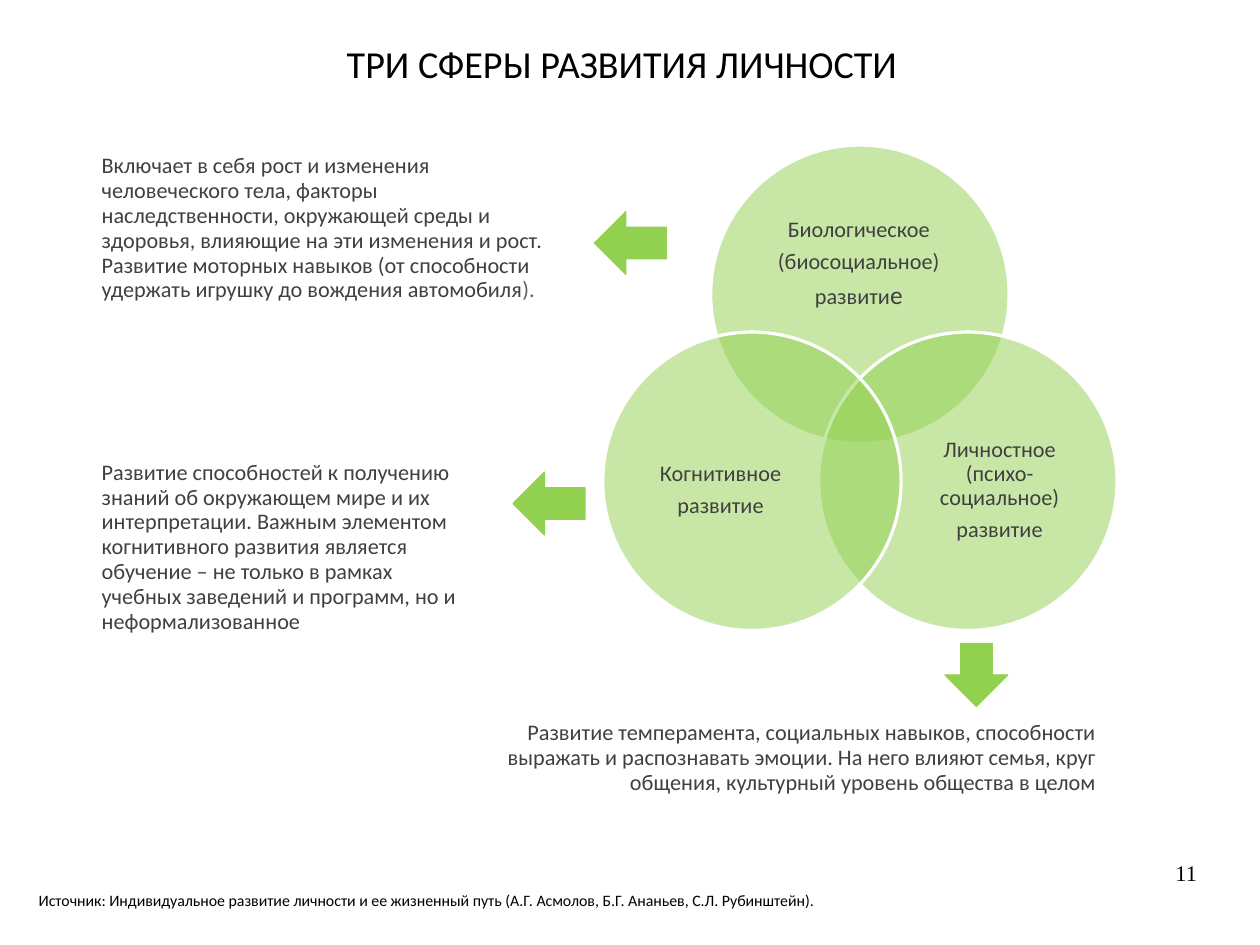
"""Builds a slide on the three spheres of personal growth."""
from dataclasses import dataclass
from math import cos, radians, sin

from lxml.etree import SubElement
from pptx import Presentation
from pptx.dml.color import RGBColor as Rgb
from pptx.enum.shapes import MSO_SHAPE as Kind
from pptx.enum.text import MSO_ANCHOR as Anchor, MSO_AUTO_SIZE as Fit, PP_ALIGN as Align
from pptx.oxml.ns import qn
from pptx.util import Cm, Pt


@dataclass(frozen=True)
class Theme:
    green: str = "92D050"
    white: str = "FFFFFF"
    black: str = "000000"
    dark: str = "404040"
    gray: str = "606060"
    sans: str = "Calibri"
    serif: str = "Times New Roman"
    head: float = 24
    big: float = 16
    text: float = 14
    small: float = 10


LOOK = Theme()


@dataclass(frozen=True)
class Box:
    x: float
    y: float
    w: float
    h: float

    def cm(self) -> tuple:
        return Cm(self.x), Cm(self.y), Cm(self.w), Cm(self.h)


@dataclass(frozen=True)
class Run:
    text: str
    size: float = LOOK.text
    color: str = LOOK.dark
    font: str = LOOK.sans


@dataclass(frozen=True)
class Note:
    box: Box
    paras: tuple
    align: Align = Align.LEFT
    anchor: Anchor = Anchor.TOP
    inset: bool = True
    lead: float = 0.93
    after: float = 0


@dataclass(frozen=True)
class Sphere:
    angle: float
    box: Box
    paras: tuple


@dataclass(frozen=True)
class Arrow:
    kind: Kind
    box: Box


MID_X, MID_Y, REACH, SIDE = 19.11, 9.31, 2.77, 6.63

SPHERES = (
    Sphere(-90, Box(16.66, 4.39, 4.85, 2.97), (
        (Run("Биологическое"),),
        (Run("(биосоциальное)"),),
        (Run("развити"), Run("е", LOOK.big)))),
    Sphere(30, Box(20.22, 9.09, 3.99, 3.63), (
        (Run("Личностное (психо-социальное)"),),
        (Run("развитие"),))),
    Sphere(150, Box(14.02, 9.09, 3.99, 3.63), (
        (Run("Когнитивное"),),
        (Run("развитие"),))),
)

ARROWS = (
    Arrow(Kind.LEFT_ARROW, Box(13.21, 4.7, 1.6, 1.4)),
    Arrow(Kind.LEFT_ARROW, Box(11.4, 10.49, 1.6, 1.4)),
    Arrow(Kind.DOWN_ARROW, Box(21, 14.3, 1.4, 1.4)),
)

TITLE = Note(Box(2.39, 0.69, 22.86, 1.55),
             ((Run("ТРИ СФЕРЫ РАЗВИТИЯ ЛИЧНОСТИ", LOOK.head, LOOK.black),),),
             Align.CENTER, Anchor.MIDDLE)

NOTES = (
    Note(Box(2.01, 3.3, 10.59, 3.61), ((
        Run("Включает в себя рост и изменения человеческого тела, факторы "
            "наследственности, окружающей среды и здоровья, влияющие на эти "
            "изменения и рост. Развитие моторных навыков (от способности "
            "удержать игрушку до вождения автомобиля"),
        Run(").", color=LOOK.gray)),)),
    Note(Box(2.01, 10.11, 8.79, 4.14), ((
        Run("Развитие способностей к получению знаний об окружающем мире и их "
            "интерпретации. Важным элементом когнитивного развития является "
            "обучение – не только в рамках учебных заведений и программ, но и "
            "неформализованное"),),)),
    Note(Box(10.21, 15.9, 14.4, 1.93), ((
        Run("Развитие темперамента, социальных навыков, способности выражать и "
            "распознавать эмоции. На него влияют семья, круг общения, "
            "культурный уровень общества в целом"),),), Align.RIGHT),
    Note(Box(0.61, 19.71, 20.8, 0.66), ((
        Run("Источник: Индивидуальное развитие личности и ее жизненный путь "
            "(А.Г. Асмолов, Б.Г. Ананьев, С.Л. Рубинштейн).",
            LOOK.small, LOOK.black),),)),
    Note(Box(20.07, 19.13, 6.53, 1.45),
         ((Run("11", LOOK.text, LOOK.black, LOOK.serif),),),
         Align.RIGHT, inset=False, lead=0.95),
)


def write(shape, note: Note) -> None:
    frame = shape.text_frame
    frame.word_wrap = True
    frame.auto_size = Fit.NONE
    frame.vertical_anchor = note.anchor
    if not note.inset:
        frame.margin_left = frame.margin_right = 0
        frame.margin_top = frame.margin_bottom = 0
    for i, runs in enumerate(note.paras):
        para = frame.add_paragraph() if i else frame.paragraphs[0]
        para.alignment = note.align
        para.line_spacing = note.lead
        para.space_before = Pt(0)
        para.space_after = Pt(note.after)
        for item in runs:
            run = para.add_run()
            run.text = item.text
            run.font.name = item.font
            run.font.size = Pt(item.size)
            run.font.color.rgb = Rgb.from_string(item.color)


def add_note(slide, note: Note) -> None:
    write(slide.shapes.add_textbox(*note.box.cm()), note)


def add_form(slide, kind: Kind, box: Box, edge: str, width: float):
    form = slide.shapes.add_shape(kind, *box.cm())
    form.shadow.inherit = False
    form.fill.solid()
    form.fill.fore_color.rgb = Rgb.from_string(LOOK.green)
    form.line.color.rgb = Rgb.from_string(edge)
    form.line.width = Pt(width)
    return form


def add_sphere(slide, ball: Sphere) -> None:
    turn = radians(ball.angle)
    left = MID_X + REACH * cos(turn) - SIDE / 2
    top = MID_Y + REACH * sin(turn) - SIDE / 2
    form = add_form(slide, Kind.OVAL, Box(left, top, SIDE, SIDE), LOOK.white, 2)
    tint = form.fill._xPr.find(qn("a:solidFill"))[0]
    SubElement(tint, qn("a:alpha"), val="50000")
    add_note(slide, Note(ball.box, ball.paras, Align.CENTER, Anchor.MIDDLE,
                         inset=False, lead=0.9, after=5))


def main() -> None:
    deck = Presentation()
    deck.slide_width, deck.slide_height = Cm(28), Cm(21)
    slide = deck.slides.add_slide(deck.slide_layouts[5])
    title = slide.shapes.title
    title.left, title.top, title.width, title.height = TITLE.box.cm()
    write(title, TITLE)
    for ball in SPHERES:
        add_sphere(slide, ball)
    for arrow in ARROWS:
        add_form(slide, arrow.kind, arrow.box, LOOK.green, 0.75)
    for note in NOTES:
        add_note(slide, note)
    deck.save("out.pptx")


if __name__ == "__main__":
    main()
